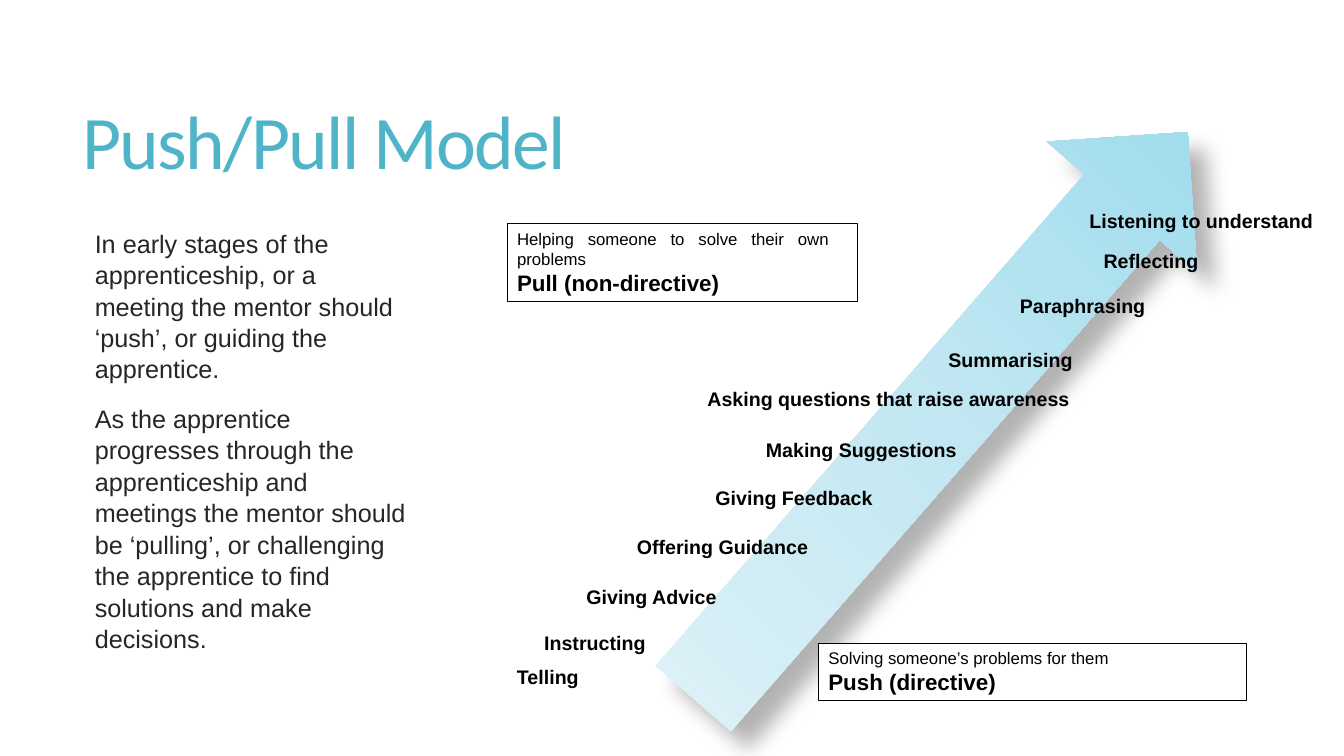
from dataclasses import dataclass

from pptx import Presentation
from pptx.dml.color import RGBColor
from pptx.enum.shapes import MSO_SHAPE
from pptx.enum.text import MSO_ANCHOR, MSO_AUTO_SIZE, PP_ALIGN
from pptx.oxml import parse_xml
from pptx.oxml.ns import nsdecls
from pptx.util import Pt

RECTANGLE = MSO_SHAPE.RECTANGLE
UP_ARROW = MSO_SHAPE.UP_ARROW
TOP, MIDDLE = MSO_ANCHOR.TOP, MSO_ANCHOR.MIDDLE
NO_FIT, GROW = MSO_AUTO_SIZE.NONE, MSO_AUTO_SIZE.SHAPE_TO_FIT_TEXT
LEFT, JUSTIFY = PP_ALIGN.LEFT, PP_ALIGN.JUSTIFY


@dataclass(frozen=True)
class Theme:
    heading_font: str = "Calibri"
    text_font: str = "Arial"
    heading: str = "50B4C8"
    body: str = "262626"
    ink: str = "000000"
    paper: str = "FFFFFF"
    arrow_stops: tuple = ((0, "99DAEC"), (50, "C1E7F2"), (100, "E1F2F8"))
    heading_size: float = 54
    body_size: float = 18
    style_size: float = 16
    label_size: float = 14
    note_size: float = 12


THEME = Theme()

ADVICE = (
    "In early stages of the apprenticeship, or a meeting the mentor should ‘push’, or guiding the apprentice.",
    "As the apprentice progresses through the apprenticeship and meetings the mentor should be ‘pulling’, "
    "or challenging the apprentice to find solutions and make decisions.",
)

STEPS = (
    ("Telling", 362.2, 471.6, 95.8, 20.2),
    ("Instructing", 381.6, 447.1, 131, 18.7),
    ("Giving Advice", 411.8, 414, 154.1, 25.9),
    ("Offering Guidance", 447.8, 378.7, 206.6, 28.1),
    ("Giving Feedback", 504, 343.4, 190.1, 23),
    ("Making Suggestions", 540, 309.6, 213.8, 24.5),
    ("Asking questions that raise awareness", 498.2, 272.9, 366.5, 23),
    ("Summarising", 670.3, 244.8, 154.8, 20.2),
    ("Paraphrasing", 721.4, 206.6, 164.2, 22.3),
    ("Reflecting", 781.2, 174.2, 129.6, 23),
    ("Listening to understand", 771.1, 145.4, 187.2, 25.2),
)

STYLES = (
    ("Helping someone to solve their own problems", "Pull (non-directive)", 362.2, 159.8, 250.6, 55.4),
    ("Solving someone’s problems for them", "Push (directive)", 584.6, 459.4, 306, 41),
)


def place(box, left, top, width, height):
    box.left, box.top, box.width, box.height = Pt(left), Pt(top), Pt(width), Pt(height)


def prepare_frame(box, anchor=TOP, fit=NO_FIT):
    frame = box.text_frame
    frame.word_wrap = True
    frame.vertical_anchor = anchor
    frame.auto_size = fit
    return frame


def write(frame, text, *, size, font=THEME.text_font, color=THEME.ink, bold=False,
          align=JUSTIFY, line=1.0, before=0, tracking=0, indent=0):
    para = frame.paragraphs[0]
    if para.runs:
        para = frame.add_paragraph()
    if indent:
        properties = para._p.get_or_add_pPr()
        properties.set("marL", str(Pt(indent)))
        properties.set("indent", str(-Pt(indent)))
        properties.append(parse_xml(f'<a:buChar {nsdecls("a")} char=" "/>'))
    para.alignment = align
    para.line_spacing = line
    para.space_before = Pt(before)
    para.space_after = Pt(0)
    span = para.add_run()
    span.text = text
    span.font.name = font
    span.font.size = Pt(size)
    span.font.bold = bold
    span.font.color.rgb = RGBColor.from_string(color)
    if tracking:
        span._r.get_or_add_rPr().set("spc", str(round(tracking * 100)))


def fill_placeholders(page):
    title, body = page.shapes.title, page.placeholders[1]
    place(title, 51.8, 39.6, 848.2, 130.3)
    write(prepare_frame(title, MIDDLE), "Push/Pull Model", size=THEME.heading_size,
          font=THEME.heading_font, color=THEME.heading, align=LEFT, line=0.85, tracking=-1.2)
    place(body, 53.3, 158.4, 246.2, 362.2)
    frame = prepare_frame(body)
    for index, advice in enumerate(ADVICE):
        write(frame, advice, size=THEME.body_size, color=THEME.body, align=LEFT,
              line=1.04, before=13 if index else 0, indent=7.2)


def add_arrow(shapes):
    arrow = shapes.add_shape(UP_ARROW, Pt(600.5), Pt(28.1), Pt(142.6), Pt(537.1))
    arrow.rotation = 41.1
    arrow.line.fill.background()
    arrow.shadow.inherit = False
    stops = "".join(
        f'<a:gs pos="{position * 1000}"><a:srgbClr val="{color}"/></a:gs>'
        for position, color in THEME.arrow_stops
    )
    gradient = parse_xml(
        f'<a:gradFill {nsdecls("a")} rotWithShape="1"><a:gsLst>{stops}</a:gsLst>'
        '<a:path path="circle"><a:fillToRect l="100000" b="100000"/></a:path></a:gradFill>'
    )
    shadow = parse_xml(
        f'<a:outerShdw {nsdecls("a")} blurRad="{Pt(15)}" dist="{Pt(18)}" dir="{45 * 60000}" '
        f'rotWithShape="0"><a:srgbClr val="{THEME.ink}"><a:alpha val="30000"/></a:srgbClr></a:outerShdw>'
    )
    properties = arrow._element.spPr
    properties.find("{*}prstGeom").addnext(gradient)
    properties.find("{*}effectLst").append(shadow)


def add_step(shapes, text, left, top, width, height):
    box = shapes.add_textbox(Pt(left), Pt(top), Pt(width), Pt(height))
    write(prepare_frame(box), text, size=THEME.label_size, bold=True)


def add_style(shapes, note, name, left, top, width, height):
    box = shapes.add_shape(RECTANGLE, Pt(left), Pt(top), Pt(width), Pt(height))
    box.shadow.inherit = False
    box.fill.solid()
    box.fill.fore_color.rgb = RGBColor.from_string(THEME.paper)
    box.line.color.rgb = RGBColor.from_string(THEME.ink)
    box.line.width = Pt(0.75)
    frame = prepare_frame(box, fit=GROW)
    frame.margin_right = Pt(20.5)
    write(frame, note, size=THEME.note_size)
    write(frame, name, size=THEME.style_size, bold=True)


def main():
    deck = Presentation()
    deck.slide_width, deck.slide_height = Pt(960), Pt(540)
    page = deck.slides.add_slide(deck.slide_layouts[1])
    fill_placeholders(page)
    model = page.shapes.add_group_shape().shapes
    add_arrow(model)
    for step in STEPS:
        add_step(model, *step)
    for style in STYLES:
        add_style(model, *style)
    deck.save("out.pptx")


if __name__ == "__main__":
    main()
